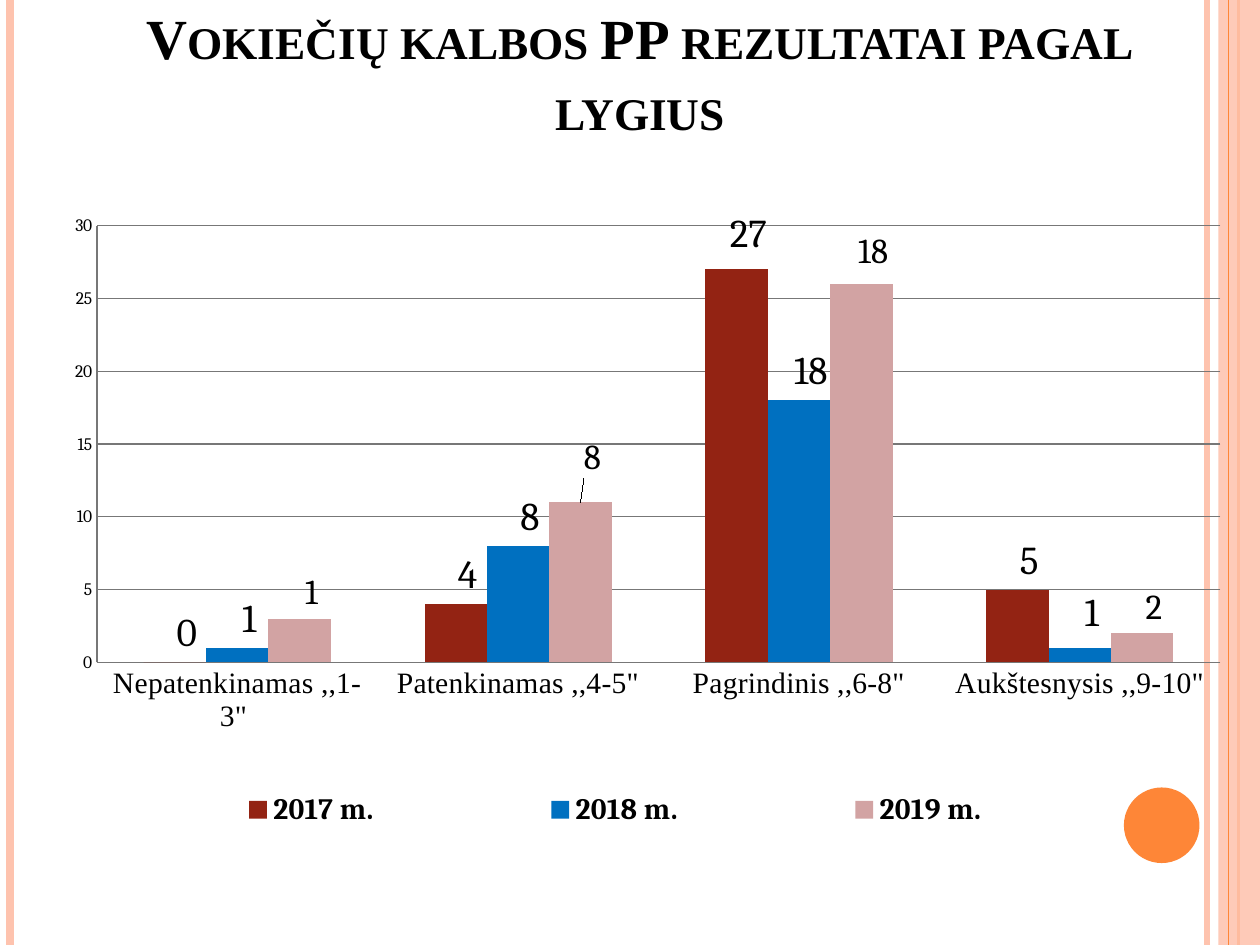
from lxml import etree
from pptx import Presentation, util as u
from pptx.chart.data import CategoryChartData
from pptx.dml.color import RGBColor
from pptx.enum import chart as ch, shapes, text
from pptx.oxml import parse_xml
from pptx.oxml.ns import nsdecls, qn

TITLE = "Vokiečių kalbos PP rezultatai pagal lygius"
LEVELS = ['Nepatenkinamas ,,1-3" ', 'Patenkinamas ,,4-5"',
          'Pagrindinis ,,6-8"', 'Aukštesnysis ,,9-10"']
# year, values, colour, label size, replaced label texts, label lifts (share of chart height)
YEARS = [
    ("2017 m.", (0, 4, 27, 5), "932313", 22.5, {}, (0, 0, -0.01, 0)),
    ("2018 m.", (1, 8, 18, 1), "0070C0", 22.5, {}, (0, 0, 0, -0.01)),
    ("2019 m.", (3, 11, 26, 2), "D2A3A3", 20, {0: "1", 1: "8", 2: "18"},
     (0, -0.03, -0.01, 0)),
]
LABEL_SHIFT = 0.01
PEACH, ORANGE, BLACK, GRID = "FEC3AE", "FE8637", "000000", "777777"
# x, colour, width in points
STRIPES = [(9.58, PEACH, 3), (0.08, PEACH, 4.5), (9.83, ORANGE, 1.5), (9.75, ORANGE, 0.75)]
WIDTH, HEIGHT = 10, 7.5


def rgb(value):
    return RGBColor.from_string(value)


def box(*lengths):
    return [u.Inches(length) for length in lengths]


def style(font, size, name="Cambria", bold=False):
    font.size, font.name, font.bold = u.Pt(size), name, bold
    font.color.rgb = rgb(BLACK)


def layout_xml(inner=False, **places):
    """Manual chart layout; x, y, w and h are shares of the chart."""
    target = '<c:layoutTarget val="inner"/>' if inner else ""
    modes = "" if "w" not in places else '<c:xMode val="edge"/><c:yMode val="edge"/>'
    values = "".join(f'<c:{key} val="{value}"/>' for key, value in places.items())
    return parse_xml(f'<c:layout {nsdecls("c")}><c:manualLayout>{target}{modes}{values}'
                     '</c:manualLayout></c:layout>')


def replace_layout(parent, layout, after=None):
    for old in parent.findall(qn("c:layout")):
        parent.remove(old)
    if after is None:
        parent.insert(0, layout)
    else:
        parent.find(qn(after)).addnext(layout)


def add_stripe(slide, x, color, width):
    stripe = slide.shapes.add_connector(shapes.MSO_CONNECTOR.STRAIGHT,
                                        *box(x, 0, x, HEIGHT))
    stripe.line.color.rgb = rgb(color)
    stripe.line.width = u.Pt(width)
    etree.SubElement(stripe._element.spPr, qn("a:effectLst"))


def add_plain(slide, kind, place, color, opacity=100):
    shape = slide.shapes.add_shape(kind, *box(*place))
    shape.shadow.inherit = False
    shape.fill.solid()
    shape.fill.fore_color.rgb = rgb(color)
    shape.line.fill.background()
    if opacity < 100:
        color_node = shape._element.spPr.find(".//" + qn("a:srgbClr"))
        etree.SubElement(color_node, qn("a:alpha"), val=str(opacity * 1000))


def fill_title(title):
    title.left, title.top, title.width, title.height = box(0.55, 0.17, 9.06, 1.01)
    frame = title.text_frame
    frame.text, frame.word_wrap = TITLE, True
    frame.auto_size = text.MSO_AUTO_SIZE.NONE
    frame.vertical_anchor = text.MSO_ANCHOR.BOTTOM
    heading = frame.paragraphs[0]
    heading.alignment, heading.line_spacing = text.PP_ALIGN.CENTER, 1.05
    style(heading.font, 32.4, "Times New Roman", True)
    heading.runs[0].font._element.set("cap", "small")


def label_points(series, size, replaced, lifts):
    for index, lift in enumerate(lifts):
        label = series.points[index].data_label
        if index in replaced:
            label.text_frame.text = replaced[index]
            style(label.text_frame.paragraphs[0].runs[0].font, size)
        else:
            style(label.font, size)
        label.position = ch.XL_LABEL_POSITION.OUTSIDE_END
        replace_layout(label._dLbl, layout_xml(x=LABEL_SHIFT, y=lift), "c:idx")


def add_results(slide):
    data = CategoryChartData()
    data.categories = LEVELS
    for name, values, *_ in YEARS:
        data.add_series(name, values)
    chart = slide.shapes.add_chart(ch.XL_CHART_TYPE.COLUMN_CLUSTERED,
                                   *box(0.27, 1.62, 9.42, 5.06), data).chart
    style(chart.font, 10)
    chart.has_title = False
    plot = chart.plots[0]
    plot.gap_width, plot.overlap, plot.vary_by_categories = 150, 0, False

    for series, (_, _, color, *labels) in zip(plot.series, YEARS):
        series.format.fill.solid()
        series.format.fill.fore_color.rgb = rgb(color)
        label_points(series, *labels)

    levels, counts = chart.category_axis, chart.value_axis
    for axis in (levels, counts):
        axis.major_tick_mark = axis.minor_tick_mark = ch.XL_TICK_MARK.NONE
        axis.format.line.color.rgb = rgb(GRID)
    style(levels.tick_labels.font, 16.9, "Times New Roman")
    style(counts.tick_labels.font, 10)
    counts.minimum_scale, counts.maximum_scale, counts.major_unit = 0, 30, 5
    counts.major_gridlines.format.line.color.rgb = rgb(GRID)

    chart.has_legend = True
    legend = chart.legend
    legend.position, legend.include_in_layout = ch.XL_LEGEND_POSITION.RIGHT, False
    style(legend.font, 16.9, bold=True)
    replace_layout(legend._element, layout_xml(x=0.04, y=0.9, w=0.9, h=0.1), "c:legendPos")
    replace_layout(chart._chartSpace.chart.plotArea,
                   layout_xml(inner=True, x=0.053, y=0.034, w=0.947, h=0.685))


def main():
    deck = Presentation()
    deck.slide_width, deck.slide_height = box(WIDTH, HEIGHT)
    slide = deck.slides.add_slide(deck.slide_layouts[5])
    for stripe in STRIPES:
        add_stripe(slide, *stripe)
    add_plain(slide, shapes.MSO_SHAPE.RECTANGLE, (9.67, 0, 0.33, HEIGHT), PEACH, 87)
    add_stripe(slide, *STRIPES[-1])
    add_plain(slide, shapes.MSO_SHAPE.OVAL, (8.92, 6.25, 0.6, 0.6), ORANGE)
    fill_title(slide.shapes.title)
    add_results(slide)
    deck.save("out.pptx")


if __name__ == "__main__":
    main()
